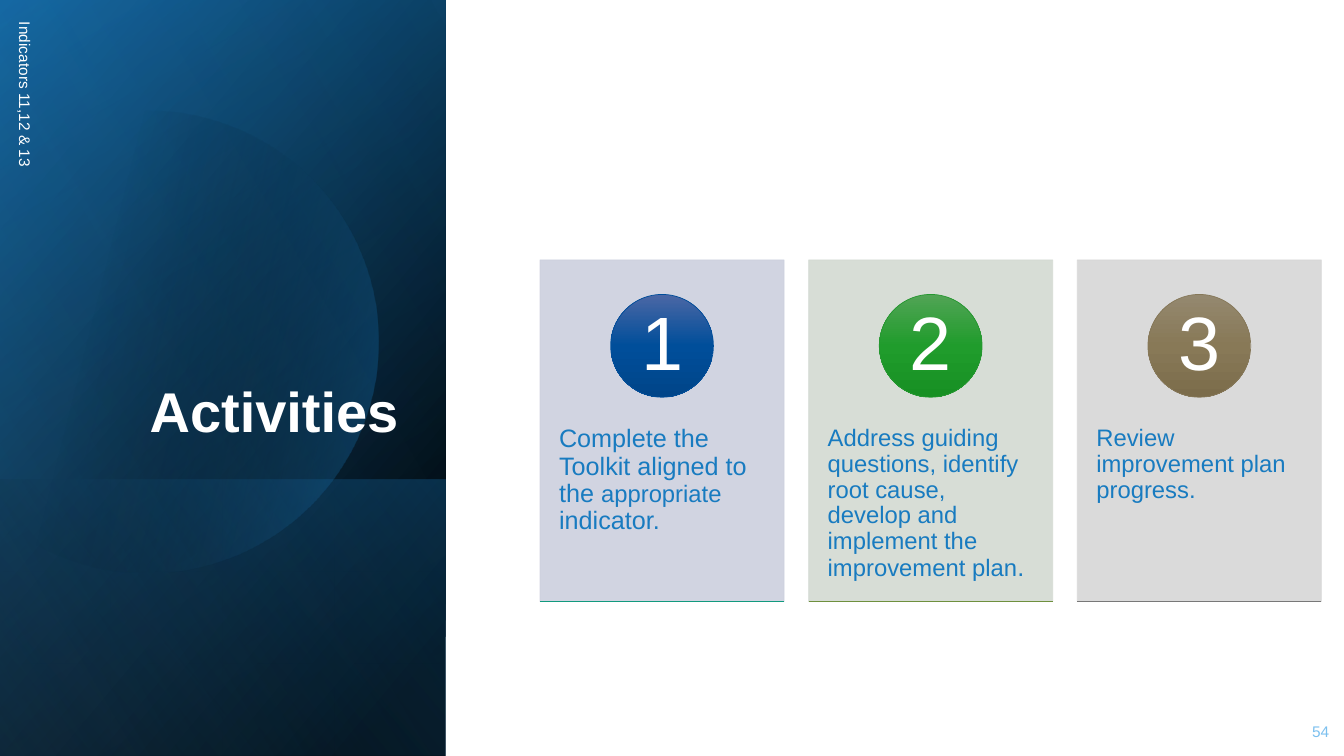
"""Build the Activities slide: a blue gradient panel and three numbered cards."""
import math
from dataclasses import dataclass

import lxml.etree
import pptx
import pptx.dml.color
import pptx.enum.shapes
import pptx.enum.text
import pptx.oxml.ns
import pptx.util
from pptx.dml.color import RGBColor
from pptx.util import Cm, Pt

qn = pptx.oxml.ns.qn
SHAPE = pptx.enum.shapes.MSO_SHAPE
ALIGN = pptx.enum.text.PP_ALIGN
ANCHOR = pptx.enum.text.MSO_ANCHOR

FONT = "Arial"
WHITE = RGBColor(0xFF, 0xFF, 0xFF)
BLACK = RGBColor(0x00, 0x00, 0x00)
NAVY = RGBColor(0x12, 0x5C, 0x90)
BLUE = RGBColor(0x18, 0x7B, 0xC0)
SKY = RGBColor(0x62, 0xB3, 0xEB)
PALE_BLUE = RGBColor(0x7C, 0xC0, 0xEF)

SLIDE_W, SLIDE_H = 33.87, 19.05
PANEL_W = 11.23
BAND_TOP = 12.09
CIRCLE_X, CIRCLE_Y, CIRCLE_R = 3.71, 8.61, 5.82
CARD_LEFT, CARD_TOP, CARD_W, CARD_H, CARD_PITCH = 13.61, 6.55, 6.15, 8.61, 6.77
DISC_TOP, DISC_SIZE = 7.42, 2.59
BODY_TOP, BODY_H = 9.83, 5.16


@dataclass
class Stop:
    pos: int
    color: RGBColor
    alpha: int = 100


@dataclass
class Layer:
    top: float
    height: float
    angle: int
    stops: list[Stop]


@dataclass
class Card:
    runs: list[tuple[str, int]]
    fill: RGBColor
    disc: list[RGBColor]
    disc_line: RGBColor
    rule: RGBColor


LAYERS = [
    Layer(0, SLIDE_H, 50, [Stop(8, BLACK), Stop(100, NAVY)]),
    Layer(0, SLIDE_H, 30, [Stop(0, BLACK, 0), Stop(99, BLUE, 46)]),
    Layer(BAND_TOP, SLIDE_H - BAND_TOP, 130, [Stop(2, BLUE, 29), Stop(100, BLACK, 30)]),
]
SHEEN = Layer(0, SLIDE_H, 120, [Stop(0, BLACK, 0), Stop(99, SKY, 11)])

CARDS = [
    Card([("Complete the Toolkit aligned to the ", 18), ("appropriate", 17), (" indicator.", 18)],
         RGBColor(0xCC, 0xD0, 0xDE),
         [RGBColor(0x4B, 0x67, 0xA5), RGBColor(0x00, 0x4E, 0x9A), RGBColor(0x00, 0x45, 0x89)],
         RGBColor(0x00, 0x4E, 0x9A), RGBColor(0x11, 0x9A, 0x7E)),
    Card([("Address guiding questions, identify root cause, develop and implement "
           "the improvement plan", 17), (".", 18)],
         RGBColor(0xD3, 0xDA, 0xD2),
         [RGBColor(0x51, 0xA4, 0x55), RGBColor(0x20, 0x9C, 0x2C), RGBColor(0x17, 0x90, 0x23)],
         RGBColor(0x26, 0x97, 0x31), RGBColor(0x6F, 0x90, 0x3E)),
    Card([("Review improvement plan progress.", 17)],
         RGBColor(0xD7, 0xD7, 0xD7),
         [RGBColor(0x94, 0x88, 0x6F), RGBColor(0x88, 0x79, 0x57), RGBColor(0x7B, 0x6C, 0x4B)],
         RGBColor(0x86, 0x78, 0x59), RGBColor(0x78, 0x78, 0x78)),
]


def set_alpha(clr, percent: int) -> None:
    lxml.etree.SubElement(clr, qn("a:alpha"), val=str(percent * 1000))


def fill_gradient(sp, stops: list[Stop], angle: int) -> None:
    sp.fill.gradient()
    grad = sp._element.spPr.find(qn("a:gradFill"))
    for child in list(grad):
        grad.remove(child)
    gs_lst = lxml.etree.SubElement(grad, qn("a:gsLst"))
    for stop in stops:
        gs = lxml.etree.SubElement(gs_lst, qn("a:gs"), pos=str(stop.pos * 1000))
        clr = lxml.etree.SubElement(gs, qn("a:srgbClr"), val=str(stop.color))
        if stop.alpha < 100:
            set_alpha(clr, stop.alpha)
    lxml.etree.SubElement(grad, qn("a:lin"), ang=str(angle * 60000), scaled="0")
    grad.set("rotWithShape", "1")


def add_layer(s, layer: Layer) -> None:
    left = (PANEL_W - layer.height) / 2
    top = layer.top + (layer.height - PANEL_W) / 2
    sp = s.shapes.add_shape(SHAPE.RECTANGLE, Cm(left), Cm(top), Cm(layer.height), Cm(PANEL_W))
    sp.rotation = 90
    sp._element.spPr.find(qn("a:xfrm")).set("flipH", "1")
    sp.shadow.inherit = False
    sp.line.fill.background()
    fill_gradient(sp, layer.stops, layer.angle)


def add_circle(s) -> None:
    reach = math.acos(-CIRCLE_X / CIRCLE_R)
    angles = [reach * (i / 60 - 1) for i in range(121)]
    points = [(Cm(CIRCLE_X + CIRCLE_R * math.cos(a)), Cm(CIRCLE_Y + CIRCLE_R * math.sin(a)))
              for a in angles]
    builder = s.shapes.build_freeform(*points[0])
    builder.add_line_segments(points[1:], close=True)
    sp = builder.convert_to_shape()
    sp.shadow.inherit = False
    sp.line.fill.background()
    fill_gradient(sp, [Stop(29, BLACK, 0), Stop(100, BLUE, 43)], 14)


def write(p, runs: list[tuple[str, int]], color: RGBColor, align=ALIGN.LEFT,
          spacing: float = 1.0, bold: bool = False) -> None:
    p.alignment = align
    p.line_spacing = spacing
    p.font.name = FONT
    p.font.color.rgb = color
    p.font.bold = bold
    sizes = {size for _, size in runs}
    if len(sizes) == 1:
        p.font.size = Pt(sizes.pop())
    for text, size in runs:
        r = p.add_run()
        r.text = text
        if p.font.size is None:
            r.font.size = Pt(size)


def add_text(s, left: float, top: float, width: float, height: float, anchor=ANCHOR.MIDDLE):
    sp = s.shapes.add_textbox(Cm(left), Cm(top), Cm(width), Cm(height))
    sp.text_frame.word_wrap = True
    sp.text_frame.vertical_anchor = anchor
    return sp


def add_card(s, number: int, card: Card) -> None:
    left = CARD_LEFT + (number - 1) * CARD_PITCH
    sp = s.shapes.add_shape(SHAPE.RECTANGLE, Cm(left), Cm(CARD_TOP), Cm(CARD_W), Cm(CARD_H))
    sp.shadow.inherit = False
    sp.fill.solid()
    sp.fill.fore_color.rgb = card.fill
    sp.line.color.rgb = card.fill
    sp.line.width = Pt(0.5)
    for clr in list(sp._element.spPr.iter(qn("a:srgbClr"))):
        set_alpha(clr, 90)

    tf = add_text(s, left, BODY_TOP, CARD_W, BODY_H, ANCHOR.TOP).text_frame
    tf.margin_left = tf.margin_right = Cm(0.48)
    tf.margin_top = tf.margin_bottom = Cm(0.91)
    write(tf.paragraphs[0], card.runs, BLUE, spacing=0.9)

    disc = s.shapes.add_shape(SHAPE.OVAL, Cm(left + (CARD_W - DISC_SIZE) / 2), Cm(DISC_TOP),
                              Cm(DISC_SIZE), Cm(DISC_SIZE))
    disc.shadow.inherit = False
    fill_gradient(disc, [Stop(50 * i, c) for i, c in enumerate(card.disc)], 90)
    disc.line.color.rgb = card.disc_line
    disc.line.width = Pt(0.5)
    tf = disc.text_frame
    tf.margin_left = tf.margin_right = Cm(0.2)
    tf.margin_top = tf.margin_bottom = Cm(0.03)
    tf.vertical_anchor = ANCHOR.MIDDLE
    write(tf.paragraphs[0], [(str(number), 54)], WHITE, ALIGN.CENTER, 0.9)

    bottom = Cm(CARD_TOP + CARD_H)
    rule = s.shapes.add_connector(pptx.enum.shapes.MSO_CONNECTOR.STRAIGHT,
                                  Cm(left), bottom, Cm(left + CARD_W), bottom)
    rule.line.color.rgb = card.rule
    rule.line.width = Pt(0.5)
    lxml.etree.SubElement(rule._element.spPr, qn("a:effectLst"))


def main() -> None:
    prs = pptx.Presentation()
    prs.slide_width, prs.slide_height = Cm(SLIDE_W), Cm(SLIDE_H)
    s = prs.slides.add_slide(prs.slide_layouts[6])
    for layer in LAYERS:
        add_layer(s, layer)
    add_circle(s)
    add_layer(s, SHEEN)
    title = add_text(s, 1.63, 4.67, 8.66, 6.65, ANCHOR.BOTTOM)
    write(title.text_frame.paragraphs[0], [("Activities", 40)], WHITE, ALIGN.RIGHT, 0.9, True)
    side = add_text(s, -5.08, 5.51, 11.43, 1.02)
    side.rotation = 90
    write(side.text_frame.paragraphs[0], [("Indicators 11,12 & 13", 11)], WHITE)
    page = add_text(s, 32.51, 17.93, 1.24, 1.02)
    write(page.text_frame.paragraphs[0], [("54", 11)], PALE_BLUE, ALIGN.RIGHT)
    for number, card in enumerate(CARDS, 1):
        add_card(s, number, card)
    prs.save("out.pptx")


if __name__ == "__main__":
    main()
